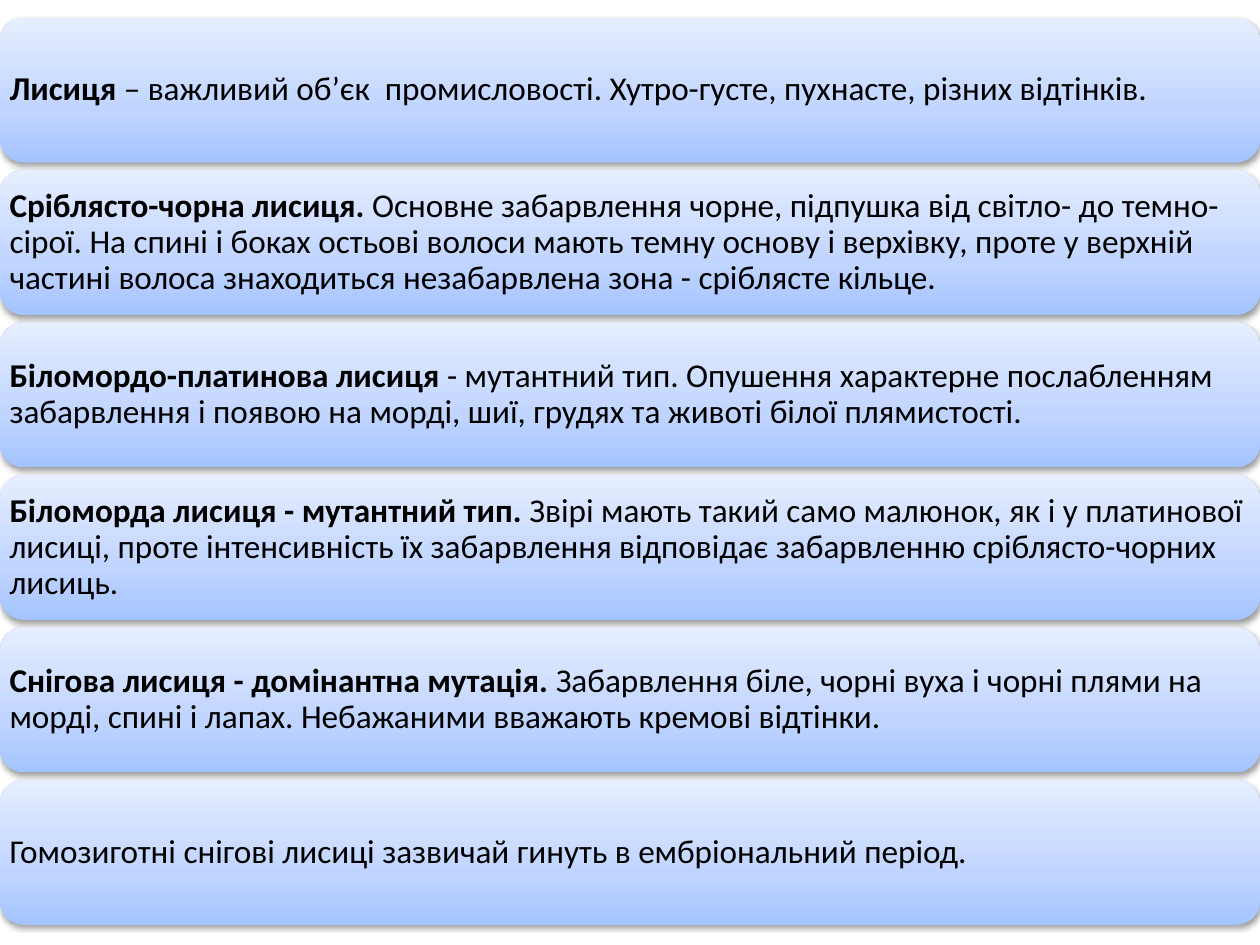
from lxml.etree import fromstring
from pptx import Presentation
from pptx.dml.color import RGBColor
from pptx.enum.shapes import MSO_SHAPE
from pptx.enum.text import MSO_ANCHOR, PP_ALIGN
from pptx.oxml.ns import nsdecls
from pptx.util import Inches, Pt

# (bold lead, plain text)
CARDS = [
    ("Лисиця ",
     "– важливий об’єк  промисловості. Хутро-густе, пухнасте, різних відтінків."),
    ("Сріблясто-чорна лисиця. ",
     "Основне забарвлення чорне, підпушка від світло- до темно-сірої. "
     "На спині і боках остьові волоси мають темну основу і верхівку, проте у верхній "
     "частині волоса знаходиться незабарвлена зона - сріблясте кільце."),
    ("Біломордо-платинова лисиця ",
     "- мутантний тип. Опушення характерне послабленням забарвлення і появою на морді, "
     "шиї, грудях та животі білої плямистості."),
    ("Біломорда лисиця - мутантний тип. ",
     "Звірі мають такий само малюнок, як і у платинової лисиці, проте інтенсивність "
     "їх забарвлення відповідає забарвленню сріблясто-чорних лисиць."),
    ("Снігова лисиця - домінантна мутація. ",
     "Забарвлення біле, чорні вуха і чорні плями на морді, спині і лапах. "
     "Небажаними вважають кремові відтінки."),
    ("", "Гомозиготні снігові лисиці зазвичай гинуть в ембріональний період."),
]
COLORS = {"bottom": "A4C4FF", "middle": "BFD4FF", "top": "E6EEFF",
          "text": "000000", "shadow": "000000"}
STOPS = [(0, "bottom"), (35, "middle"), (100, "top")]
FONT, SIZE = "Calibri", Pt(19)
WIDTH, HEIGHT = 10, 7.5
CARD_TOP, CARD_H, PITCH = 0.14, 1.15, 1.21


def style_card(sp):
    """Three-stop vertical gradient, no outline, soft shadow below."""
    sp.line.fill.background()
    stops = "".join(
        f'<a:gs pos="{pos * 1000}"><a:srgbClr val="{COLORS[name]}"/></a:gs>'
        for pos, name in STOPS)
    spPr = sp._element.spPr
    spPr.get_or_add_ln().addprevious(fromstring(
        f'<a:gradFill {nsdecls("a")} rotWithShape="1"><a:gsLst>{stops}</a:gsLst>'
        '<a:lin ang="16200000" scaled="0"/></a:gradFill>'))
    spPr.append(fromstring(
        f'<a:effectLst {nsdecls("a")}><a:outerShdw blurRad="{Pt(3.1)}" dist="{Pt(1.6)}" '
        f'dir="5400000" rotWithShape="0"><a:srgbClr val="{COLORS["shadow"]}">'
        '<a:alpha val="38000"/></a:srgbClr></a:outerShdw></a:effectLst>'))


def add_card(s, top, lead, body):
    sp = s.shapes.add_shape(MSO_SHAPE.ROUNDED_RECTANGLE, 0, Inches(top),
                            Inches(WIDTH), Inches(CARD_H))
    style_card(sp)
    tf = sp.text_frame
    tf.word_wrap = True
    tf.vertical_anchor = MSO_ANCHOR.MIDDLE
    # the rounded corners already inset the text a little
    tf.margin_left = tf.margin_right = tf.margin_top = tf.margin_bottom = Inches(0.02)
    p = tf.paragraphs[0]
    p.alignment = PP_ALIGN.LEFT
    p.line_spacing = 0.9
    for text, bold in ((lead, True), (body, False)):
        if text:
            r = p.add_run()
            r.text = text
            r.font.name, r.font.size, r.font.bold = FONT, SIZE, bold
            r.font.color.rgb = RGBColor.from_string(COLORS["text"])


def main():
    prs = Presentation()
    prs.slide_width, prs.slide_height = Inches(WIDTH), Inches(HEIGHT)
    s = prs.slides.add_slide(prs.slide_layouts[6])
    for i, (lead, body) in enumerate(CARDS):
        add_card(s, CARD_TOP + i * PITCH, lead, body)
    prs.save("out.pptx")


if __name__ == "__main__":
    main()
